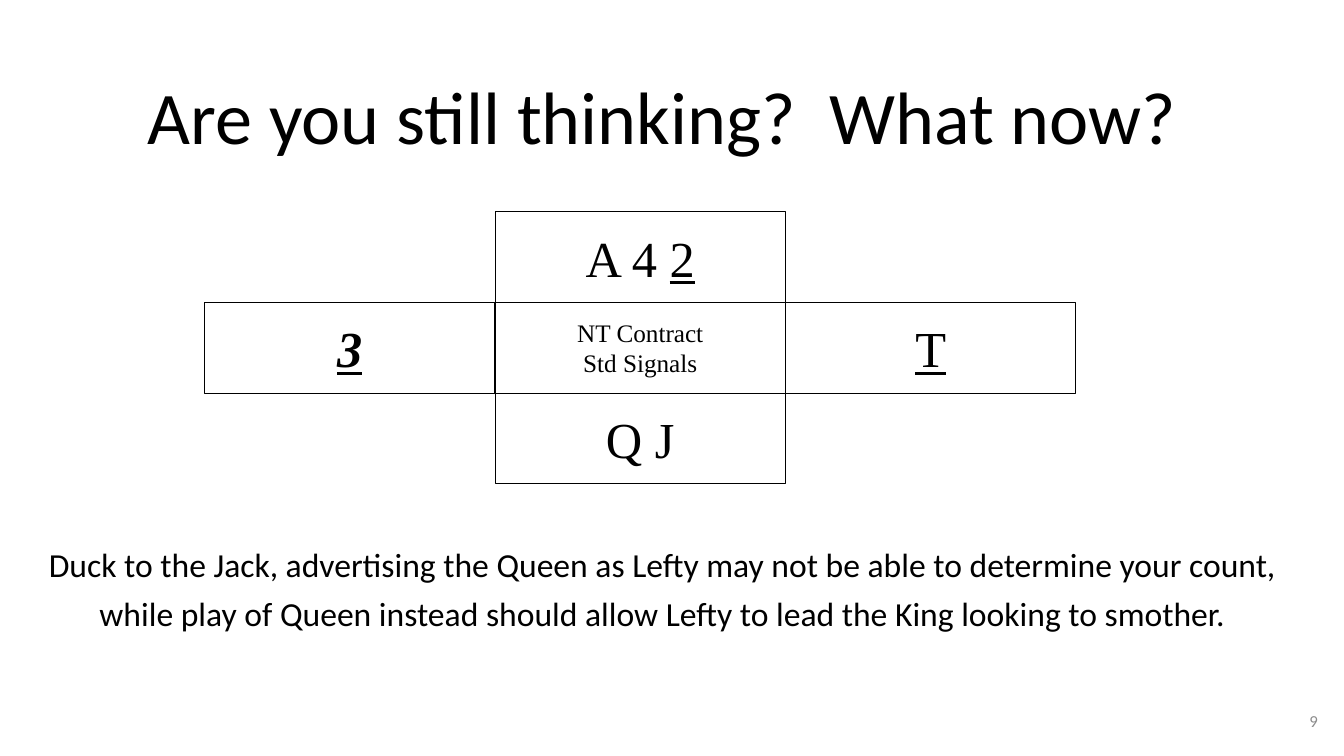
import pptx
import pptx.dml.color
import pptx.enum.shapes
import pptx.enum.text
import pptx.util

Inches = pptx.util.Inches
Pt = pptx.util.Pt
ALIGN = pptx.enum.text.PP_ALIGN
ANCHOR = pptx.enum.text.MSO_ANCHOR

BLACK = pptx.dml.color.RGBColor(0x00, 0x00, 0x00)
WHITE = pptx.dml.color.RGBColor(0xFF, 0xFF, 0xFF)
GRAY = pptx.dml.color.RGBColor(0x8C, 0x8C, 0x8C)


class Deck:
    """Holds the style and the current slide."""

    body_font = "Calibri"
    card_font = "Times New Roman"

    def __init__(self, prs):
        self.s = prs.slides.add_slide(prs.slide_layouts[6])

    def fill_text(self, sp, paragraphs, size, font, color=BLACK,
                  align=ALIGN.CENTER, anchor=ANCHOR.MIDDLE, spacing=None):
        """Each paragraph is a list of (text, style letters from "biu")."""
        tf = sp.text_frame
        tf.word_wrap = True
        tf.vertical_anchor = anchor
        for i, runs in enumerate(paragraphs):
            p = tf.add_paragraph() if i else tf.paragraphs[0]
            p.alignment = align
            if spacing:
                p.line_spacing = spacing
            for text, style in runs:
                r = p.add_run()
                r.text = text
                r.font.name = font
                r.font.size = Pt(size)
                r.font.color.rgb = color
                r.font.bold = "b" in style
                r.font.italic = "i" in style
                r.font.underline = "u" in style

    def text(self, x, y, w, h, lines, size, **style):
        sp = self.s.shapes.add_textbox(Inches(x), Inches(y), Inches(w), Inches(h))
        self.fill_text(sp, [[(line, "")] for line in lines], size,
                       self.body_font, **style)

    def box(self, x, y, w, h, paragraphs, size):
        sp = self.s.shapes.add_shape(pptx.enum.shapes.MSO_SHAPE.RECTANGLE,
                                     Inches(x), Inches(y), Inches(w), Inches(h))
        sp.shadow.inherit = False
        sp.fill.solid()
        sp.fill.fore_color.rgb = WHITE
        sp.line.color.rgb = BLACK
        sp.line.width = Pt(0.75)
        self.fill_text(sp, paragraphs, size, self.card_font)


def main():
    prs = pptx.Presentation()
    prs.slide_width = Inches(13.33)
    prs.slide_height = Inches(7.5)
    deck = Deck(prs)

    # Title
    deck.text(0.28, 0.3, 12.58, 1.8, ["Are you still thinking?  What now?"], 53,
              spacing=0.9)

    # Card diagram: a cross of equal boxes (column, row, text, size)
    left, top, width, height = 2.03, 2.1, 2.88, 0.9
    hands = [
        (1, 0, [[("A 4 ", ""), ("2", "u")]], 36),
        (0, 1, [[("3", "biu")]], 36),
        (2, 1, [[("T", "u")]], 36),
        (1, 2, [[("Q J", "")]], 36),
        (1, 1, [[("NT Contract", "")], [("Std Signals", "")]], 18),
    ]
    for col, row, paragraphs, size in hands:
        deck.box(left + col * width, top + row * height, width, height,
                 paragraphs, size)

    # Advice
    deck.text(0.28, 5.27, 12.58, 1.61, [
        "Duck to the Jack, advertising the Queen as Lefty may not be able to determine your count,",
        "while play of Queen instead should allow Lefty to lead the King looking to smother.",
    ], 24, anchor=ANCHOR.TOP, spacing=1.2)

    # Slide number
    deck.text(10.17, 6.95, 3, 0.4, ["9"], 12, color=GRAY, align=ALIGN.RIGHT)

    prs.save("out.pptx")


if __name__ == "__main__":
    main()
